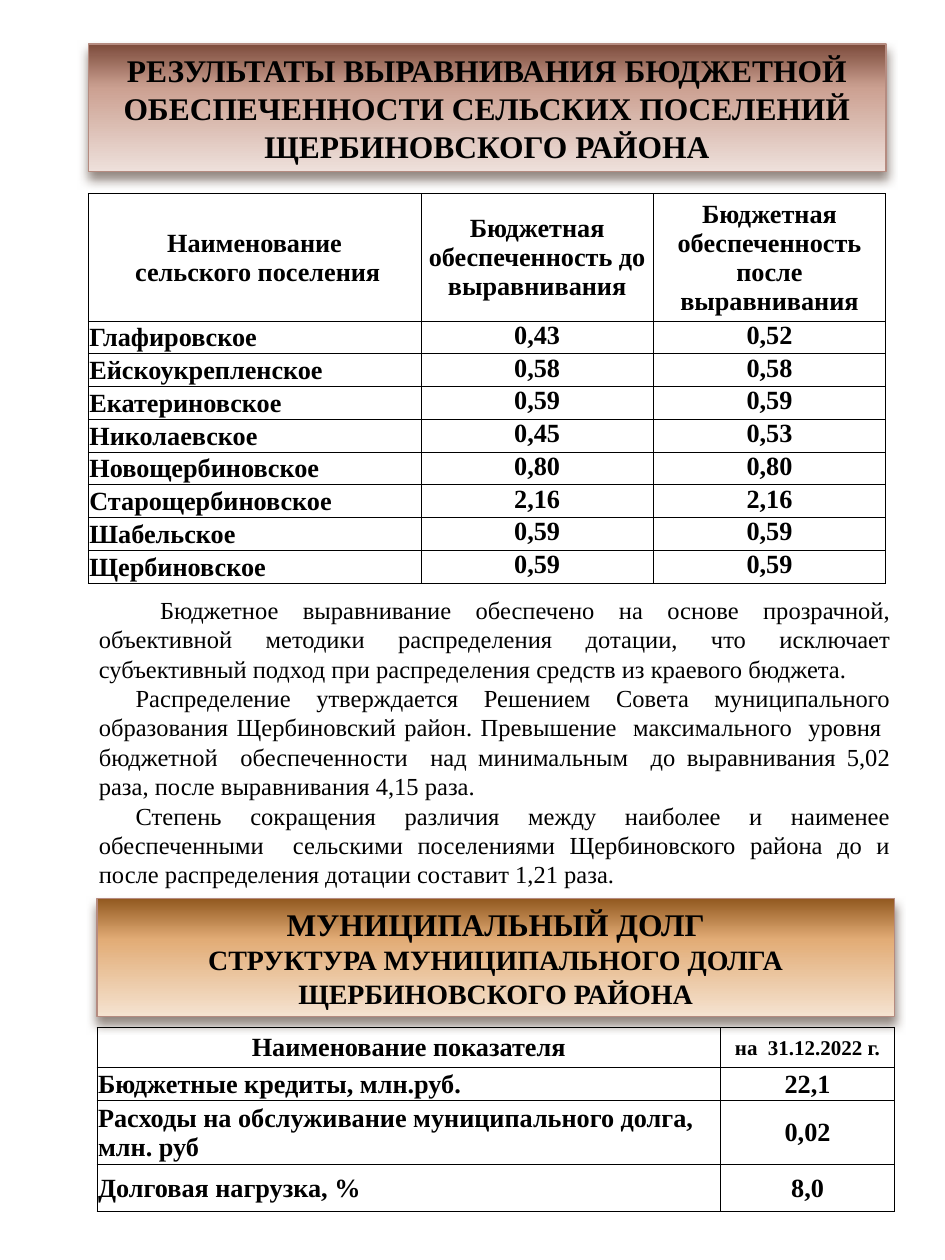
from lxml import etree
from pptx import Presentation
from pptx.dml.color import RGBColor
from pptx.enum import shapes, text
from pptx.util import Pt

FONT = "Times New Roman"
NS = 'xmlns:a="http://schemas.openxmlformats.org/drawingml/2006/main"'
CENTER, LEFT = text.PP_ALIGN.CENTER, text.PP_ALIGN.LEFT
color = RGBColor.from_string


def style_banner(banner, place, stops, wording, sizes):
    banner.left, banner.top, banner.width, banner.height = map(Pt, place)
    banner.line.color.rgb = color("B58B80")
    banner.line.width = Pt(0.79)
    # Three-stop vertical gradient and a soft shadow below
    marks = "".join(f'<a:gs pos="{pos * 1000}"><a:srgbClr val="{shade}"/></a:gs>'
                    for pos, shade in zip((0, 35, 100), stops))
    outline = banner.line._get_or_add_ln()
    outline.addprevious(etree.fromstring(
        f'<a:gradFill {NS} rotWithShape="1"><a:gsLst>{marks}</a:gsLst>'
        '<a:lin ang="5400000" scaled="0"/></a:gradFill>'))
    outline.addnext(etree.fromstring(
        f'<a:effectLst {NS}><a:outerShdw blurRad="{Pt(6)}" dist="{Pt(4)}" dir="5400000" rotWithShape="0">'
        '<a:srgbClr val="4E3B30"><a:alpha val="60000"/></a:srgbClr></a:outerShdw></a:effectLst>'))
    frame = banner.text_frame
    frame.text = wording
    frame.word_wrap = True
    frame.auto_size = text.MSO_AUTO_SIZE.NONE
    frame.vertical_anchor = text.MSO_ANCHOR.MIDDLE
    for line, size in zip(frame.paragraphs, sizes):
        line.alignment = CENTER
        line.font.name, line.font.size, line.font.bold = FONT, Pt(size), True
        line.font.color.rgb = color("000000")


def add_grid(place, widths, heights, rows, values_on_top):
    grid = slide.shapes.add_table(len(rows), len(widths), *map(Pt, place)).table
    grid.first_row = grid.horz_banding = False
    for column, width in zip(grid.columns, widths):
        column.width = Pt(width)
    for r, (row, height) in enumerate(zip(rows, heights)):
        grid.rows[r].height = Pt(height)
        for c, wording in enumerate(row):
            cell = grid.cell(r, c)
            cell.text = wording
            on_top = values_on_top and r > 0 and c > 0
            inset = 0 if on_top else Pt(0.7)
            cell.margin_left = cell.margin_right = cell.margin_top = inset
            cell.margin_bottom = 0
            cell.vertical_anchor = text.MSO_ANCHOR.TOP if on_top else text.MSO_ANCHOR.MIDDLE
            for line in cell.text_frame.paragraphs:
                line.alignment = LEFT if r > 0 and c == 0 else CENTER
                line.font.name, line.font.size, line.font.bold = FONT, Pt(15), True
                line.font.color.rgb = color("000000")
            for side in "LRTB":
                cell._tc.get_or_add_tcPr().append(etree.fromstring(
                    f'<a:ln{side} {NS} w="{Pt(0.5)}"><a:solidFill><a:srgbClr val="000000"/>'
                    f'</a:solidFill></a:ln{side}>'))
            cell.fill.background()
    return grid


deck = Presentation()
deck.slide_width, deck.slide_height = Pt(540), Pt(720)
slide = deck.slides.add_slide(deck.slide_layouts[5])

# Heading
style_banner(slide.shapes.title, (50.4, 25.2, 455.8, 72.7), ("7C4B3B", "CCA192", "EEE0DB"),
             "РЕЗУЛЬТАТЫ ВЫРАВНИВАНИЯ БЮДЖЕТНОЙ ОБЕСПЕЧЕННОСТИ СЕЛЬСКИХ ПОСЕЛЕНИЙ "
             "ЩЕРБИНОВСКОГО РАЙОНА", [18])

# Budget provision by settlement
provision = [
    ("Наименование\n сельского поселения", "Бюджетная обеспеченность до выравнивания",
     "Бюджетная обеспеченность после выравнивания"),
    ("Глафировское", "0,43", "0,52"),
    ("Ейскоукрепленское", "0,58", "0,58"),
    ("Екатериновское", "0,59", "0,59"),
    ("Николаевское", "0,45", "0,53"),
    ("Новощербиновское", "0,80", "0,80"),
    ("Старощербиновское", "2,16", "2,16"),
    ("Шабельское", "0,59", "0,59"),
    ("Щербиновское", "0,59", "0,59"),
]
add_grid((50.4, 110.7, 455.8, 222.7), (190.2, 132.8, 132.8), [72.7] + [18.75] * 8,
         provision, values_on_top=True)

# Explanation
explanation = slide.shapes.add_textbox(Pt(49.4), Pt(336.3), Pt(466.6), Pt(177)).text_frame
explanation.word_wrap = True
explanation.text = "\n".join([
    " Бюджетное выравнивание обеспечено на основе прозрачной, объективной методики распределения "
    "дотации, что исключает субъективный подход при распределения средств из краевого бюджета. ",
    "Распределение утверждается Решением Совета муниципального образования Щербиновский район. "
    "Превышение  максимального  уровня  бюджетной  обеспеченности  над минимальным  до "
    "выравнивания 5,02 раза, после выравнивания 4,15 раза. ",
    "Степень  сокращения  различия  между  наиболее  и  наименее обеспеченными  сельскими "
    "поселениями Щербиновского района до и после распределения дотации составит 1,21 раза.",
])
for passage in explanation.paragraphs:
    passage.alignment = text.PP_ALIGN.JUSTIFY
    passage.font.name, passage.font.size = FONT, Pt(14)
    passage.font.color.rgb = color("000000")
    passage._p.get_or_add_pPr().set("indent", str(Pt(21)))

# Municipal debt heading
debt_heading = slide.shapes.add_shape(shapes.MSO_SHAPE.RECTANGLE, 0, 0, Pt(10), Pt(10))
style_banner(debt_heading, (55.4, 513.3, 455.8, 67.7), ("91581F", "E2AC76", "F5E3D1"),
             "МУНИЦИПАЛЬНЫЙ ДОЛГ\nСТРУКТУРА МУНИЦИПАЛЬНОГО ДОЛГА ЩЕРБИНОВСКОГО РАЙОНА", [18, 16])

# Municipal debt structure
debt = [
    ("Наименование показателя", "на  31.12.2022 г."),
    ("Бюджетные кредиты, млн.руб.", "22,1"),
    ("Расходы на обслуживание муниципального долга,\nмлн. руб", "0,02"),
    ("Долговая нагрузка, %", "8,0"),
]
debt_grid = add_grid((55.4, 587, 455.8, 105), (356.4, 99.4), (23, 18.5, 36.9, 26.6),
                     debt, values_on_top=False)
debt_grid.cell(0, 1).text_frame.paragraphs[0].font.size = Pt(12)

deck.save("out.pptx")
